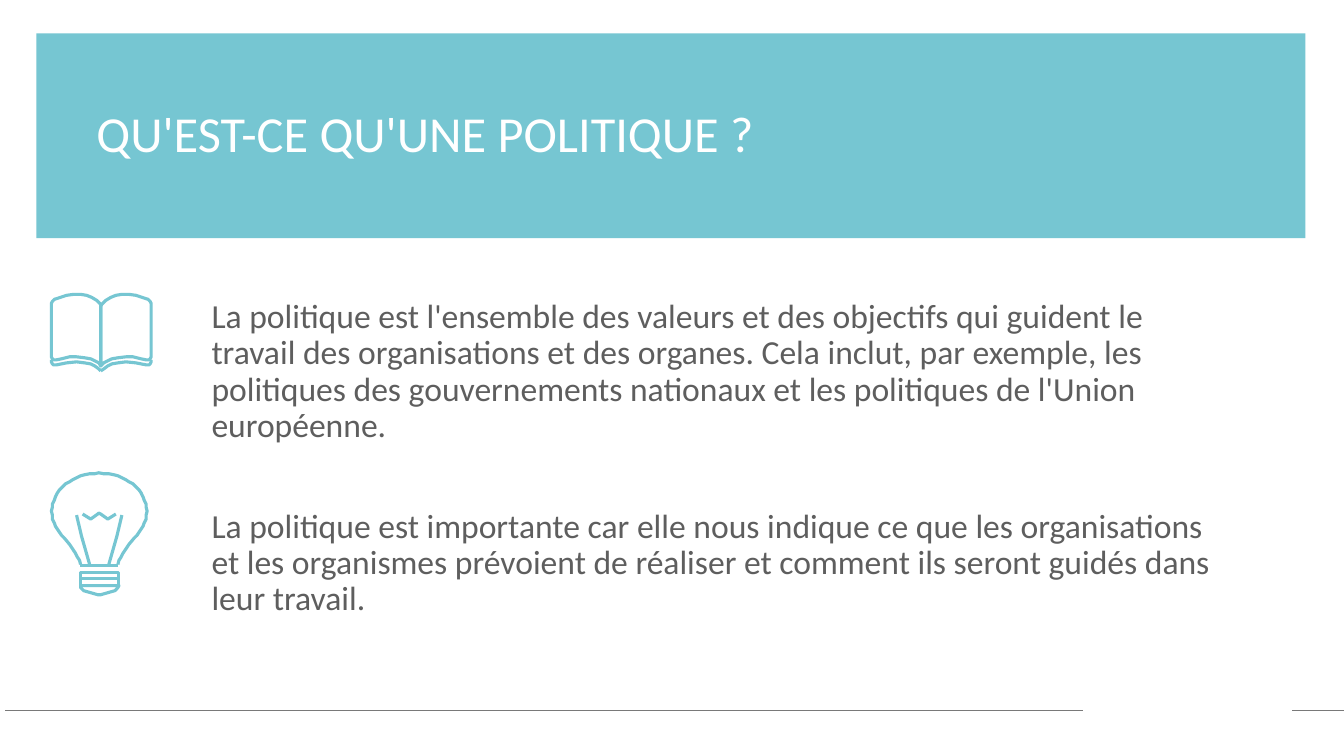
import pptx
import pptx.util
import pptx.dml.color
import pptx.enum.shapes
import pptx.enum.text
import pptx.oxml.ns
from lxml import etree

Cm = pptx.util.Cm
Pt = pptx.util.Pt
COLORS = {"teal": "76C6D2", "white": "FFFFFF", "text": "5E5E5E", "rule": "797979"}
UNIT = Cm(0.0254)

BOOK_AXIS = 201
PAGE_EDGE = [(51, 357), (51, 359), (52, 361), (53, 362), (56, 362), (61, 361),
             (66, 360), (76, 359), (84, 360), (90, 361), (94, 363), (98, 366),
             (100.5, 368)]
PAGE = [(100.5, 304), (100.5, 363), (98, 360), (94, 358), (90, 356), (84, 355),
        (76, 354), (69, 354), (61, 356), (56, 357), (53, 357), (52, 356),
        (51, 354), (51, 301), (52, 299), (54, 297), (60, 295), (66, 293),
        (73, 292), (80, 292), (86, 293), (91, 295), (96, 298), (99, 301),
        (100, 302)]

BULB_AXIS = 197
GLASS = [(98.5, 469), (94, 470), (89, 470), (84, 471), (80, 472), (76, 474),
         (72, 476), (69, 478), (65, 480), (62, 483), (59, 486), (57, 489),
         (55, 493), (54, 496), (52, 500), (52, 503), (51, 507), (52, 511),
         (52, 515), (54, 519), (55, 522), (57, 525), (59, 528), (61, 531),
         (64, 534), (69, 540), (71, 543), (73, 546), (75, 549), (77, 553),
         (79, 556), (80, 560)]
STEM = [(89, 560), (81, 532), (76, 511)]
FILAMENT = [(82, 510), (90, 515), (97, 510), (98.5, 509)]
SCREW = [(79.5, 581), (80, 583), (81, 584), (83, 586), (97, 590), (98.5, 590)]


def mirror(points, axis):
    return [(axis - x, y) for x, y in points]


def symmetric(points, axis):
    return points + mirror(points[::-1], axis)


class Deck:
    font = "Calibri"
    icon_width = Pt(2.25)

    def __init__(self):
        self.prs = pptx.Presentation()
        self.prs.slide_width, self.prs.slide_height = Cm(33.87), Cm(19.05)
        self.s = self.prs.slides.add_slide(self.prs.slide_layouts[1])

    def rgb(self, name):
        return pptx.dml.color.RGBColor.from_string(COLORS[name])

    def band(self, left, top, width, height, color):
        sp = self.s.shapes.add_shape(pptx.enum.shapes.MSO_SHAPE.RECTANGLE,
                                     Cm(left), Cm(top), Cm(width), Cm(height))
        sp.shadow.inherit = False
        sp.fill.solid()
        sp.fill.fore_color.rgb = self.rgb(color)
        sp.line.fill.background()
        self.s.shapes._spTree.insert(2, sp._element)

    def line(self, shapes, x1, y1, x2, y2, color, width):
        sp = shapes.add_connector(pptx.enum.shapes.MSO_CONNECTOR.STRAIGHT,
                                  Cm(x1), Cm(y1), Cm(x2), Cm(y2))
        sp.line.color.rgb = self.rgb(color)
        sp.line.width = width
        etree.SubElement(sp._element.spPr, pptx.oxml.ns.qn("a:effectLst"))

    def outline(self, shapes, points, close=False):
        builder = shapes.build_freeform(*points[0], scale=UNIT)
        builder.add_line_segments(points[1:], close=close)
        sp = builder.convert_to_shape()
        sp.shadow.inherit = False
        sp.fill.background()
        sp.line.color.rgb = self.rgb("teal")
        sp.line.width = self.icon_width

    def text(self, sp, box, paragraphs, size, color, gap=0):
        sp.left, sp.top, sp.width, sp.height = [Cm(v) for v in box]
        tf = sp.text_frame
        frame = {"word_wrap": True,
                 "auto_size": pptx.enum.text.MSO_AUTO_SIZE.NONE,
                 "vertical_anchor": pptx.enum.text.MSO_ANCHOR.TOP,
                 "margin_left": Cm(0.25), "margin_right": Cm(0.25),
                 "margin_top": Cm(0.13), "margin_bottom": Cm(0.13)}
        for key, value in frame.items():
            setattr(tf, key, value)
        for i, content in enumerate(paragraphs):
            p = tf.add_paragraph() if i else tf.paragraphs[0]
            pPr = p._p.get_or_add_pPr()
            pPr.set("marL", "0")
            pPr.set("indent", "0")
            etree.SubElement(pPr, pptx.oxml.ns.qn("a:buNone"))
            layout = {"alignment": pptx.enum.text.PP_ALIGN.LEFT, "line_spacing": 0.9,
                      "space_before": Pt(gap if i else 0), "space_after": Pt(0)}
            for key, value in layout.items():
                setattr(p, key, value)
            r = p.add_run()
            r.text = content
            for key, value in {"name": self.font, "size": Pt(size), "bold": False}.items():
                setattr(r.font, key, value)
            r.font.color.rgb = self.rgb(color)

    def book(self):
        shapes = self.s.shapes.add_group_shape().shapes
        for points, close in ((PAGE_EDGE, False), (PAGE, True)):
            self.outline(shapes, points, close)
            self.outline(shapes, mirror(points, BOOK_AXIS), close)

    def bulb(self):
        shapes = self.s.shapes.add_group_shape().shapes
        for top in (568, 574.5):
            side = [(79.5, top), (79.5, top + 6.5)]
            self.outline(shapes, symmetric(side, BULB_AXIS), close=True)
        self.outline(shapes, symmetric(SCREW, BULB_AXIS), close=True)
        for points in (STEM, mirror(STEM, BULB_AXIS),
                       symmetric(GLASS[::-1], BULB_AXIS),
                       symmetric(FILAMENT, BULB_AXIS)):
            self.outline(shapes, points)
        self.line(shapes, 2.02, 14.25, 2.98, 14.25, "teal", self.icon_width)


def main():
    deck = Deck()
    deck.band(0.92, 0.84, 31.98, 5.16, "teal")
    for x1, x2 in ((0.13, 27.28), (32.56, 33.87)):
        deck.line(deck.s.shapes, x1, 17.91, x2, 17.91, "rule", Pt(0.5))
    deck.text(deck.s.shapes.title, (2.18, 2.62, 29.34, 1.93),
              ["QU'EST-CE QU'UNE POLITIQUE ?"], 36, "white")
    deck.text(deck.s.placeholders[1], (5.08, 7.42, 25.88, 9.02), [
        "La politique est l'ensemble des valeurs et des objectifs qui guident le "
        "travail des organisations et des organes. Cela inclut, par exemple, les "
        "politiques des gouvernements nationaux et les politiques de l'Union européenne.",
        "La politique est importante car elle nous indique ce que les organisations "
        "et les organismes prévoient de réaliser et comment ils seront guidés dans "
        "leur travail."], 24, "text", gap=46)
    deck.book()
    deck.bulb()
    deck.prs.save("out.pptx")


if __name__ == "__main__":
    main()
